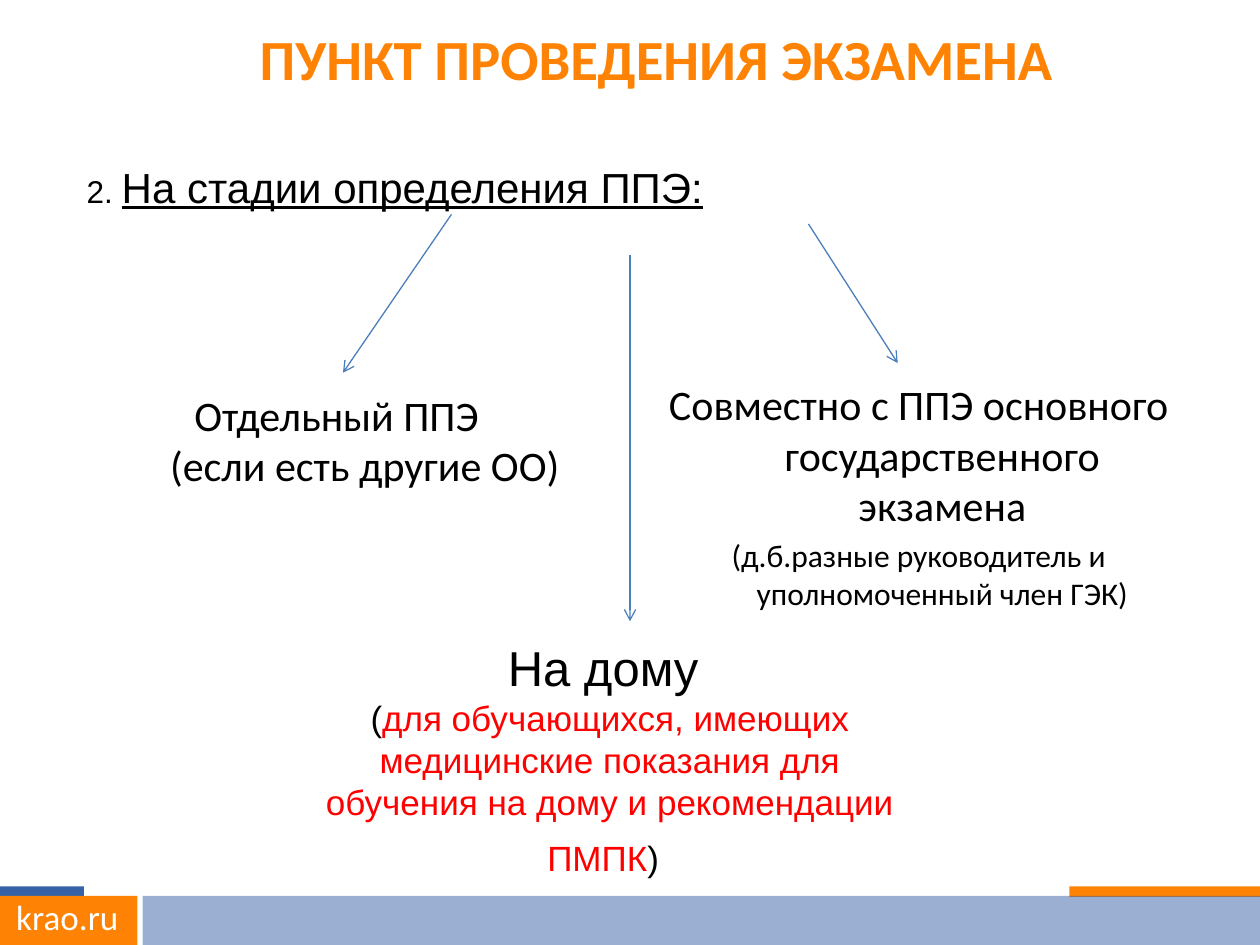
from pptx import Presentation
from pptx.dml.color import RGBColor
from pptx.enum.shapes import MSO_CONNECTOR, MSO_SHAPE
from pptx.enum.text import MSO_ANCHOR, MSO_AUTO_SIZE, PP_ALIGN
from pptx.oxml.ns import qn
from pptx.util import Pt
from lxml.etree import SubElement

ORANGE = RGBColor(0xFE, 0x83, 0x04)
BLUE = RGBColor(0x36, 0x61, 0xA6)
ARROW_BLUE = RGBColor(0x4B, 0x7E, 0xBC)
RED = RGBColor(0xFF, 0x00, 0x00)
BLACK = RGBColor(0x00, 0x00, 0x00)
WHITE = RGBColor(0xFF, 0xFF, 0xFF)


def add_text(p, text, *, size, font="Calibri", color=BLACK, bold=False, underline=False):
    """Append text to a paragraph; each newline becomes a line break."""
    for i, line in enumerate(text.split("\n")):
        if i:
            p.add_line_break()
        r = p.add_run()
        r.text = line
        r.font.size = Pt(size)
        r.font.name = font
        r.font.color.rgb = color
        r.font.bold = bold
        r.font.underline = underline


def add_box(left, top, width, height, wrap=True):
    """Add a text box and return its text frame."""
    box = s.shapes.add_textbox(Pt(left), Pt(top), Pt(width), Pt(height))
    box.text_frame.word_wrap = wrap
    return box.text_frame


prs = Presentation()
prs.slide_width, prs.slide_height = Pt(720), Pt(540)
s = prs.slides.add_slide(prs.slide_layouts[5])

# Footer bars
bars = [
    (0, 506.5, 48, 6, BLUE, None),
    (611, 506.5, 109, 6, ORANGE, None),
    (0, 512, 78.5, 28, ORANGE, None),
    (81.5, 512, 638.5, 28, BLUE, 50),
]
for left, top, width, height, color, opacity in bars:
    sp = s.shapes.add_shape(MSO_SHAPE.RECTANGLE, Pt(left), Pt(top), Pt(width), Pt(height))
    sp.shadow.inherit = False
    sp.fill.solid()
    sp.fill.fore_color.rgb = color
    sp.line.fill.background()
    if opacity:
        clr = sp.fill._xPr.find(".//" + qn("a:srgbClr"))
        SubElement(clr, qn("a:alpha"), val=str(opacity * 1000))

p = add_box(0, 508, 77, 32).paragraphs[0]
p.alignment = PP_ALIGN.CENTER
add_text(p, "krao.ru", size=20, color=WHITE)

# Title
title = s.shapes.title
title.left, title.top, title.width, title.height = Pt(51), Pt(14), Pt(648), Pt(38)
tf = title.text_frame
tf.auto_size = MSO_AUTO_SIZE.NONE
tf.vertical_anchor = MSO_ANCHOR.MIDDLE
p = tf.paragraphs[0]
p.alignment = PP_ALIGN.CENTER
add_text(p, "ПУНКТ ПРОВЕДЕНИЯ ЭКЗАМЕНА", size=32.4, color=ORANGE, bold=True)

# Left and right options
options = [
    ((36, 219, 318, 205), [("Отдельный ППЭ \n(если есть другие ОО)", 24)]),
    ((366, 213, 318, 211), [
        ("Совместно с ППЭ основного государственного экзамена", 24),
        ("(д.б.разные руководитель и уполномоченный член ГЭК)", 18),
    ]),
]
for place, paragraphs in options:
    tf = add_box(*place)
    for i, (text, size) in enumerate(paragraphs):
        p = tf.add_paragraph() if i else tf.paragraphs[0]
        p.alignment = PP_ALIGN.CENTER
        pPr = p._p.get_or_add_pPr()
        pPr.set("marL", str(Pt(27)))
        pPr.set("indent", str(-Pt(27)))
        if i:
            p.space_before = Pt(0.2 * size)
        add_text(p, text, size=size)

# Home option
tf = add_box(173, 361, 351, 148)
p = tf.paragraphs[0]
p.alignment = PP_ALIGN.CENTER
add_text(p, "На дому ", size=28, font="Arial")
p = tf.add_paragraph()
p.alignment = PP_ALIGN.CENTER
add_text(p, "(", size=20, font="Arial")
add_text(p, "для обучающихся, имеющих медицинские показания для обучения на дому "
            "и рекомендации ПМПК", size=20, font="Arial", color=RED)
add_text(p, ")", size=20, font="Arial")
add_text(p, " ", size=28, font="Arial")

# Heading of the scheme
p = add_box(42.5, 88.5, 371.5, 36, wrap=False).paragraphs[0]
add_text(p, "2. ", size=18, font="Arial")
add_text(p, "На стадии определения ППЭ:", size=24, font="Arial", underline=True)

# Arrows to the three options
arrows = [(258, 122.5, 196, 213), (462, 128, 513, 207.5), (360, 145.5, 360, 355)]
for x1, y1, x2, y2 in arrows:
    arrow = s.shapes.add_connector(MSO_CONNECTOR.STRAIGHT, Pt(x1), Pt(y1), Pt(x2), Pt(y2))
    arrow.line.color.rgb = ARROW_BLUE
    arrow.line.width = Pt(0.75)
    SubElement(arrow.line._get_or_add_ln(), qn("a:tailEnd"), type="arrow")
    SubElement(arrow._element.spPr, qn("a:effectLst"))

prs.save("out.pptx")
